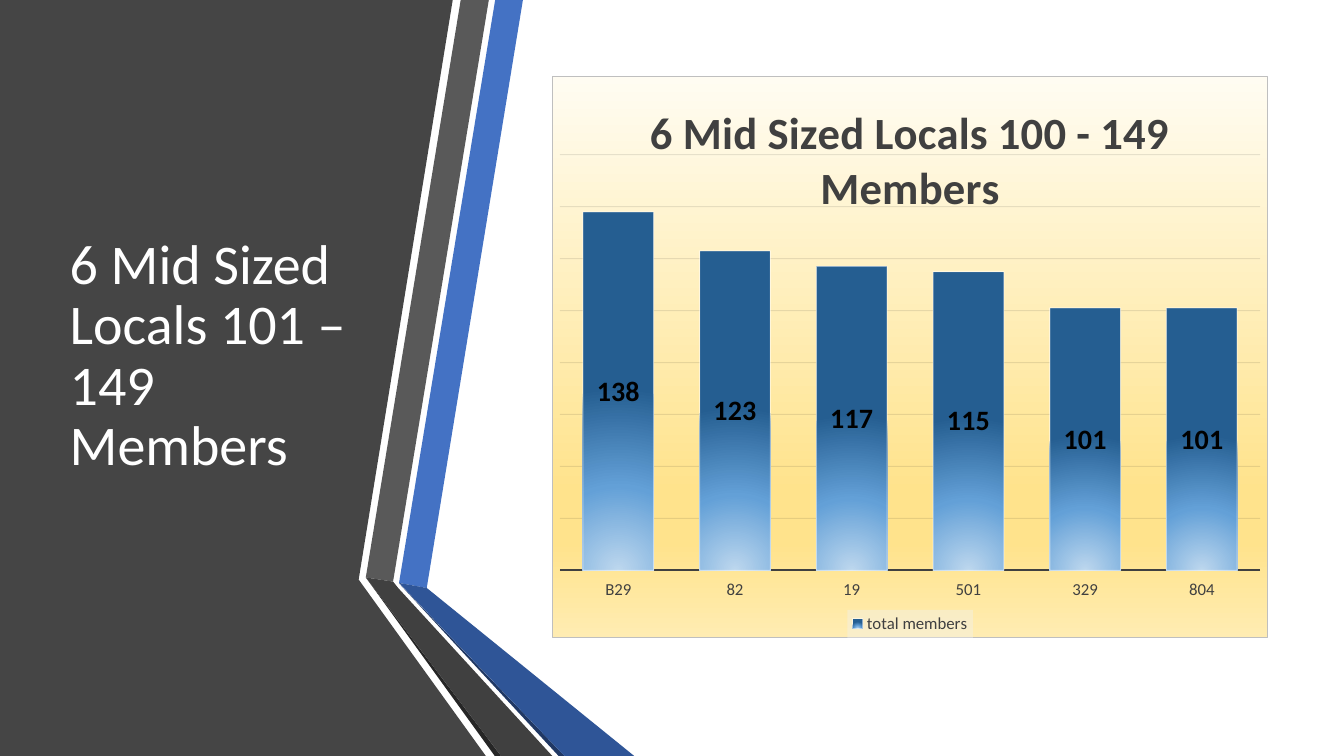
from pptx import Presentation
from pptx.chart.data import CategoryChartData
from pptx.dml.color import RGBColor
from pptx.enum.chart import (XL_CHART_TYPE, XL_LABEL_POSITION, XL_LEGEND_POSITION,
                             XL_TICK_LABEL_POSITION, XL_TICK_MARK)
from pptx.enum.text import MSO_ANCHOR, MSO_AUTO_SIZE, PP_ALIGN
from pptx.oxml import parse_xml
from pptx.oxml.ns import qn
from pptx.util import Inches, Pt

WHITE = RGBColor(0xFF, 0xFF, 0xFF)
BLACK = RGBColor(0x00, 0x00, 0x00)
PANEL_GRAY = RGBColor(0x45, 0x45, 0x45)
BAND_GRAY = RGBColor(0x59, 0x59, 0x59)
FOLD_GRAY = RGBColor(0x40, 0x40, 0x40)
EDGE_GRAY = RGBColor(0x26, 0x26, 0x26)
BAND_BLUE = RGBColor(0x44, 0x72, 0xC4)
FOLD_BLUE = RGBColor(0x2F, 0x55, 0x97)
EDGE_BLUE = RGBColor(0x20, 0x38, 0x64)
GRID_GRAY = RGBColor(0x0D, 0x0D, 0x0D)
BORDER_GRAY = RGBColor(0xBF, 0xBF, 0xBF)
LEGEND_GRAY = RGBColor(0xF2, 0xF2, 0xF2)
CREAM = RGBColor(0xFF, 0xFC, 0xF2)
GOLD = RGBColor(0xFF, 0xE3, 0x8C)
PALE_GOLD = RGBColor(0xFF, 0xEC, 0xB2)
PALE_BLUE = RGBColor(0xBD, 0xD7, 0xEE)
SKY_BLUE = RGBColor(0x63, 0xA0, 0xD7)
DEEP_BLUE = RGBColor(0x25, 0x5E, 0x91)

FONT = "Calibri"
COLUMNS, ROWS = 160, 90
PANEL = [(0, 0), (53.9, 0), (42.7, 69), (57.84, 90), (0, 90)]
RIBBONS = [
    (BAND_BLUE, [(47.5, 69.4), (50.8, 70), (62.25, 0), (58.95, 0)]),
    (BAND_GRAY, [(58.2, 0), (54.85, 0), (43.55, 68.75), (46.8, 69.25)]),
    (EDGE_GRAY, [(43.55, 68.75), (58.9, 90), (59.65, 90)]),
    (EDGE_BLUE, [(47.5, 69.45), (66.5, 90), (67.2, 90)]),
    (FOLD_BLUE, [(47.5, 69.4), (67.2, 90), (75.5, 90), (50.8, 70)]),
    (FOLD_GRAY, [(43.55, 68.75), (59.65, 90), (65.75, 90), (47.4, 70), (46.8, 69.25)]),
]
MEMBERS = {"B29": 138, "82": 123, "19": 117, "501": 115, "329": 101, "804": 101}


def format_font(font, size, color, bold=False):
    """Apply the slide's typeface with a size, colour and weight."""
    font.name, font.size, font.bold = FONT, Pt(size), bold
    font.color.rgb = color


def write_text(frame, text, align=PP_ALIGN.LEFT, spacing=None, **style):
    """Write one formatted paragraph into a text frame."""
    frame.text = text
    paragraph = frame.paragraphs[0]
    paragraph.alignment = align
    paragraph.line_spacing = spacing
    format_font(paragraph.runs[0].font, **style)


def solid(color, opacity=100):
    """Return a solid fill as XML."""
    return (f'<a:solidFill><a:srgbClr val="{color}"><a:alpha val="{opacity * 1000}"/>'
            '</a:srgbClr></a:solidFill>')


def gradient(stops, direction):
    """Return a gradient fill as XML."""
    marks = "".join(f'<a:gs pos="{position * 1000}"><a:srgbClr val="{color}"/></a:gs>'
                    for position, color in stops)
    return f'<a:gradFill rotWithShape="1"><a:gsLst>{marks}</a:gsLst>{direction}</a:gradFill>'


def shape_properties(fill, line="<a:noFill/>"):
    """Return chart shape properties with a fill and a thin line."""
    return parse_xml(
        '<c:spPr xmlns:c="http://schemas.openxmlformats.org/drawingml/2006/chart" '
        'xmlns:a="http://schemas.openxmlformats.org/drawingml/2006/main">'
        f'{fill}<a:ln w="{Pt(0.75)}">{line}</a:ln></c:spPr>')


def chart_part(chart, *tags):
    """Find the chart element at the end of a chain of tags."""
    return chart.element.find(".//" + "/".join(qn(tag) for tag in tags))


class SlideBuilder:
    """Hold the style and current slide, placing elements on a grid."""

    def __init__(self, presentation):
        """Add a title-only slide and measure its grid."""
        self.slide = presentation.slides.add_slide(presentation.slide_layouts[5])
        self.column = presentation.slide_width / COLUMNS
        self.row = presentation.slide_height / ROWS

    def box(self, left, top, width, height):
        """Convert a grid box to slide lengths."""
        return (round(left * self.column), round(top * self.row),
                round(width * self.column), round(height * self.row))

    def polygon(self, shapes, points, color):
        """Draw a closed, filled outline."""
        points = [self.box(x, y, 0, 0)[:2] for x, y in points]
        builder = shapes.build_freeform(*points[0])
        builder.add_line_segments(points[1:], close=True)
        shape = builder.convert_to_shape()
        shape.shadow.inherit = False
        shape.fill.solid()
        shape.fill.fore_color.rgb = color
        shape.line.fill.background()

    def ribbons(self, ribbons):
        """Draw the folded ribbons as one group."""
        group = self.slide.shapes.add_group_shape()
        for color, points in ribbons:
            self.polygon(group.shapes, points, color)

    def title(self, text, box):
        """Place the slide title in front of the panel."""
        shape = self.slide.shapes.title
        shape.left, shape.top, shape.width, shape.height = self.box(*box)
        frame = shape.text_frame
        frame.word_wrap = True
        frame.auto_size = MSO_AUTO_SIZE.NONE
        frame.vertical_anchor = MSO_ANCHOR.MIDDLE
        write_text(frame, text, spacing=0.9, size=40, color=WHITE)
        self.slide.shapes.element.append(shape.element)

    def column_chart(self, title, name, values, box):
        """Add the styled column chart."""
        data = CategoryChartData()
        data.categories = list(values)
        data.add_series(name, list(values.values()))
        chart = self.slide.shapes.add_chart(
            XL_CHART_TYPE.COLUMN_CLUSTERED, *self.box(*box), data).chart
        format_font(chart.font, size=10, color=BLACK)
        chart.has_title = True
        write_text(chart.chart_title.text_frame, title, align=PP_ALIGN.CENTER,
                   size=32, color=FOLD_GRAY, bold=True)
        background = gradient([(0, CREAM), (74, GOLD), (83, GOLD), (100, PALE_GOLD)],
                              '<a:lin ang="5400000" scaled="0"/>')
        chart.element.find(qn("c:txPr")).addprevious(
            shape_properties(background, solid(BORDER_GRAY)))
        self.style_axes(chart)
        self.style_legend(chart)
        self.style_columns(chart)
        self.place_plot(chart)

    def style_axes(self, chart):
        """Format the category axis and the gridlines."""
        category_axis, value_axis = chart.category_axis, chart.value_axis
        category_axis.major_tick_mark = XL_TICK_MARK.NONE
        category_axis.tick_label_position = XL_TICK_LABEL_POSITION.LOW
        format_font(category_axis.tick_labels.font, size=12, color=FOLD_GRAY)
        category_axis.format.line.width = Pt(1.5)
        category_axis.format.line.color.rgb = FOLD_GRAY
        value_axis.visible = False
        value_axis.minimum_scale, value_axis.maximum_scale = 0, 160
        value_axis.major_unit = 20
        value_axis.has_major_gridlines = True
        chart_part(chart, "c:valAx", "c:majorGridlines").append(
            shape_properties("", solid(GRID_GRAY, 10)))

    def style_legend(self, chart):
        """Put a lightly tinted legend below the plot."""
        chart.has_legend = True
        chart.legend.position = XL_LEGEND_POSITION.BOTTOM
        chart.legend.include_in_layout = False
        format_font(chart.legend.font, size=12, color=FOLD_GRAY)
        chart_part(chart, "c:legend", "c:txPr").addprevious(
            shape_properties(solid(LEGEND_GRAY, 39)))

    def style_columns(self, chart):
        """Format the columns and their centred values."""
        plot = chart.plots[0]
        plot.gap_width = 65
        plot.vary_by_categories = False
        series = plot.series[0]
        series.format.fill.solid()
        glow = gradient([(0, PALE_BLUE), (46, SKY_BLUE), (100, DEEP_BLUE)],
                        '<a:path path="circle"><a:fillToRect l="50000" t="130000" '
                        'r="50000" b="-30000"/></a:path>')
        properties = chart_part(chart, "c:ser", "c:spPr")
        properties.getparent().replace(properties, shape_properties(glow, solid(WHITE, 50)))
        labels = series.data_labels
        labels.show_value = True
        labels.position = XL_LABEL_POSITION.CENTER
        format_font(labels.font, size=20, color=BLACK, bold=True)

    def place_plot(self, chart):
        """Set the inner plot area as shares of the chart."""
        area = chart_part(chart, "c:plotArea")
        for layout in area.findall(qn("c:layout")):
            area.remove(layout)
        shares = "".join(f'<c:{side} val="{share}"/>' for side, share in
                         zip("xywh", (0.01, 0.14, 0.98, 0.74)))
        area.insert(0, parse_xml(
            '<c:layout xmlns:c="http://schemas.openxmlformats.org/drawingml/2006/chart">'
            '<c:manualLayout><c:layoutTarget val="inner"/><c:xMode val="edge"/>'
            f'<c:yMode val="edge"/>{shares}</c:manualLayout></c:layout>'))


def main():
    """Build and save the slide."""
    presentation = Presentation()
    presentation.slide_width, presentation.slide_height = Inches(13.33), Inches(7.5)
    builder = SlideBuilder(presentation)
    builder.polygon(builder.slide.shapes, PANEL, PANEL_GRAY)
    builder.ribbons(RIBBONS)
    builder.title("6 Mid Sized Locals 101 – 149 Members", (7.1, 9, 36.5, 67))
    builder.column_chart("6 Mid Sized Locals 100 - 149 Members", "total members",
                         MEMBERS, (65.75, 9, 85.2, 67))
    presentation.save("out.pptx")


if __name__ == "__main__":
    main()
